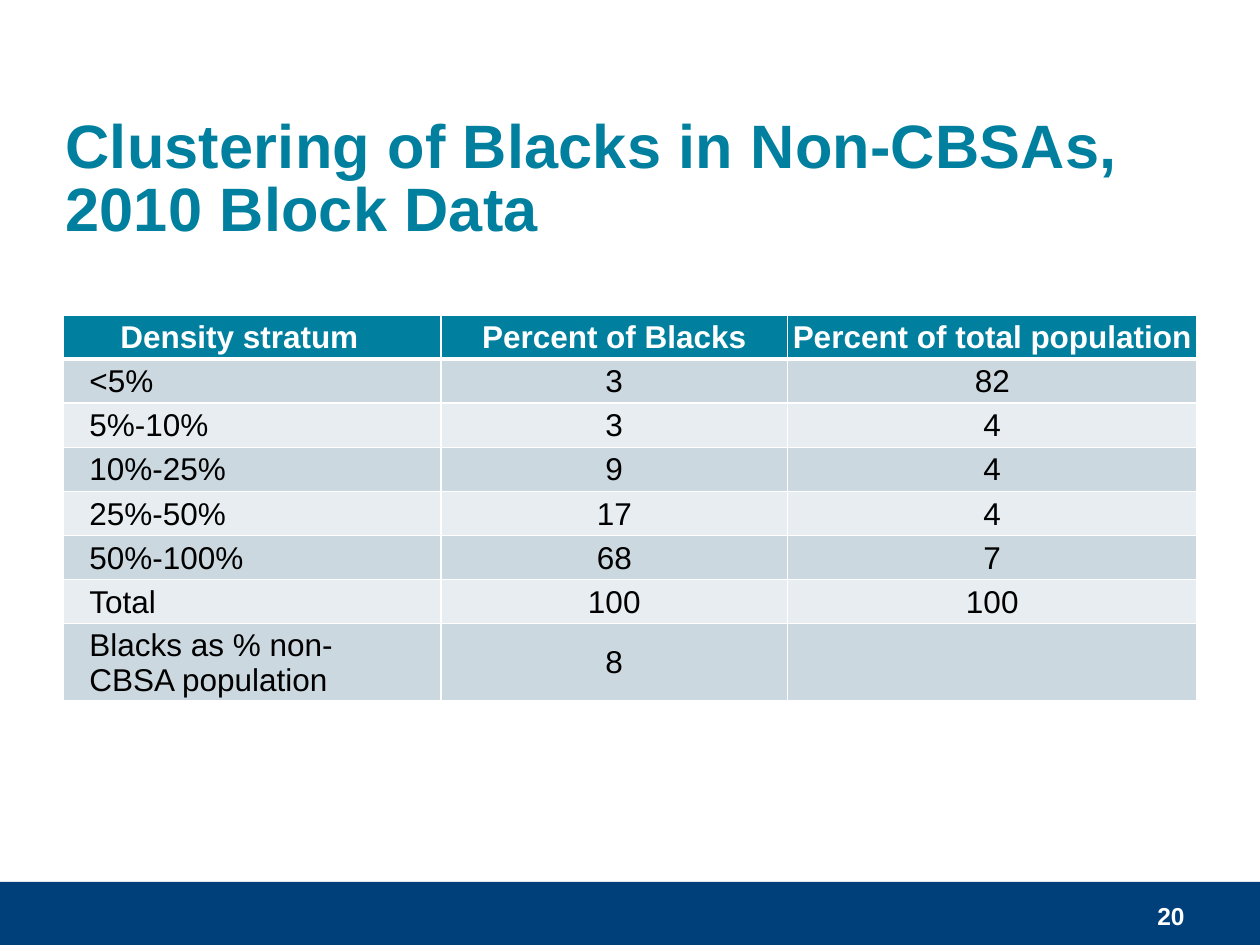
from lxml.etree import SubElement
from pptx import Presentation
from pptx.dml.color import RGBColor
from pptx.enum.shapes import MSO_SHAPE
from pptx.enum.text import MSO_ANCHOR, PP_ALIGN
from pptx.oxml.ns import qn
from pptx.util import Inches, Pt

COLORS = {
    "navy": "00407A",
    "teal": "00809E",
    "dark": "CCD8DF",
    "light": "E7EDF0",
    "white": "FFFFFF",
    "black": "000000",
}
WIDTHS = [3, 2.75, 3.25]
HEIGHTS = [0.35] * 7 + [0.56]
ROWS = [
    ["Density stratum", "Percent of Blacks", "Percent of total population"],
    ["<5%", "3", "82"],
    ["5%-10%", "3", "4"],
    ["10%-25%", "9", "4"],
    ["25%-50%", "17", "4"],
    ["50%-100%", "68", "7"],
    ["Total", "100", "100"],
    ["Blacks as % non-\nCBSA population", "8", ""],
]


def color(name):
    return RGBColor.from_string(COLORS[name])


def assign(item, values):
    for key, value in values.items():
        setattr(item, key, value)


class Deck:
    def __init__(self, slide, font="Arial"):
        self.slide = slide
        self.font = font

    def words(self, frame, text, size, tint, bold, align, leading=None):
        frame.text = text
        for para in frame.paragraphs:
            assign(para, {"alignment": align, "line_spacing": leading})
            for run in para.runs:
                assign(run.font, {"name": self.font, "size": Pt(size), "bold": bold})
                run.font.color.rgb = color(tint)

    def bar(self, box, tint):
        shape = self.slide.shapes.add_shape(MSO_SHAPE.RECTANGLE, *map(Inches, box))
        shape.shadow.inherit = False
        shape.fill.solid()
        shape.fill.fore_color.rgb = color(tint)
        shape.line.color.rgb = color(tint)
        shape.line.width = Pt(0.5)

    def label(self, box, text, size, tint, align, leading=None, pitch=None):
        frame = self.slide.shapes.add_textbox(*map(Inches, box)).text_frame
        assign(frame, {"word_wrap": True, "vertical_anchor": MSO_ANCHOR.MIDDLE})
        self.words(frame, text, size, tint, True, align, leading)
        if pitch:
            for run in frame.paragraphs[0].runs:
                run._r.get_or_add_rPr().set("spc", str(pitch))
        return frame

    def border(self, cell, sides):
        props = cell._tc.get_or_add_tcPr()
        for side, width in sides.items():
            line = SubElement(props, qn(f"a:ln{side}"), w=str(Pt(width)))
            fill = SubElement(line, qn("a:solidFill"))
            SubElement(fill, qn("a:srgbClr"), val=COLORS["white"])

    def cell(self, cell, text, row, col):
        head = row == 0
        first = col == 0
        inset = 0.21 if first else 0.01
        assign(cell, {
            "margin_left": Inches(0.01 if head else inset),
            "margin_right": Inches(inset if head else 0.01),
            "margin_top": Inches(0.01),
            "margin_bottom": 0,
            "vertical_anchor": MSO_ANCHOR.MIDDLE,
        })
        self.border(cell, {"L": 1, "R": 1, "T": 3 if row == 1 else 1, "B": 3 if head else 1})
        cell.fill.solid()
        cell.fill.fore_color.rgb = color("teal" if head else "dark" if row % 2 else "light")
        align = PP_ALIGN.LEFT if first and not head else PP_ALIGN.CENTER
        self.words(cell.text_frame, text, 18, "white" if head else "black", head, align)

    def table(self, left, top, rows, widths, heights):
        box = map(Inches, (left, top, sum(widths), sum(heights)))
        grid = self.slide.shapes.add_table(len(rows), len(widths), *box).table
        for col, width in zip(grid.columns, widths):
            col.width = Inches(width)
        for row, height in zip(grid.rows, heights):
            row.height = Inches(height)
        for r, row in enumerate(rows):
            for c, text in enumerate(row):
                self.cell(grid.cell(r, c), text, r, c)


def main():
    show = Presentation()
    assign(show, {"slide_width": Inches(10), "slide_height": Inches(7.5)})
    deck = Deck(show.slides.add_slide(show.slide_layouts[6]))
    deck.bar((0, 7, 10, 0.5), "navy")
    title = deck.label((0.17, 0.85, 9.33, 1.17),
                       "Clustering of Blacks in Non-CBSAs, \v2010 Block Data",
                       35, "teal", PP_ALIGN.LEFT, Pt(36), 10)
    title.margin_left = Inches(0.35)
    deck.table(0.5, 2.5, ROWS, WIDTHS, HEIGHTS)
    deck.label((7.17, 7.07, 2.33, 0.4), "20", 14, "white", PP_ALIGN.RIGHT)
    show.save("out.pptx")


if __name__ == "__main__":
    main()
